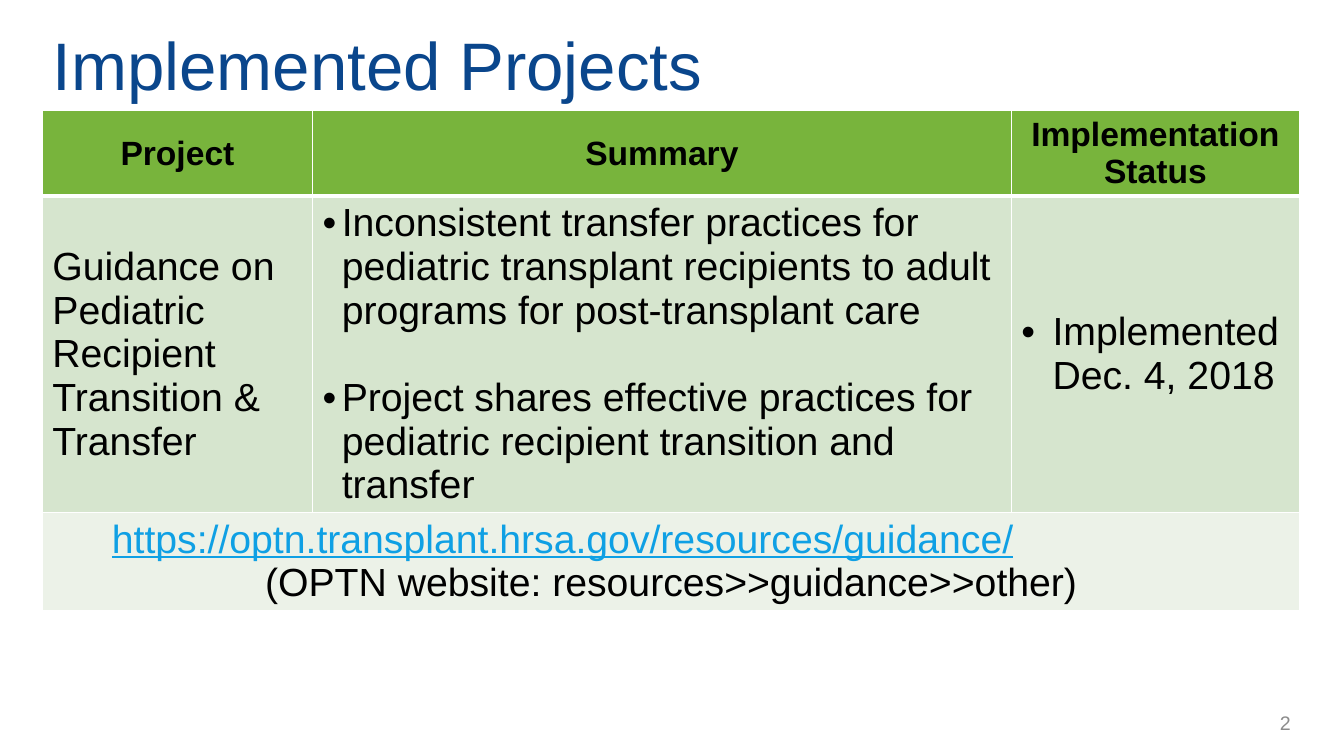
from lxml.etree import SubElement
from pptx import Presentation
from pptx.dml.color import RGBColor
from pptx.enum.text import MSO_ANCHOR, PP_ALIGN
from pptx.oxml import parse_xml
from pptx.oxml.ns import nsdecls, qn
from pptx.util import Inches, Pt

COLUMN_WIDTHS = [2.68, 6.93, 2.86]
ROW_HEIGHTS = [0.83, 3.14, 0.97]
HEADER_GREEN = "78B43C"
BODY_GREEN = "D6E5CE"
LINK_GREEN = "ECF2E8"


def color(value):
    """Turn a hex string into a colour."""
    return RGBColor.from_string(value)


def write(frame, text, size=28, ink="000000", bold=False, underline=False,
          align=PP_ALIGN.LEFT, indent=0, bullet=False, space_before=0):
    """Add one formatted paragraph, using the empty first one if there is one."""
    para = frame.paragraphs[0]
    if para.runs:
        para = frame.add_paragraph()
    para.alignment = align
    para.space_before = Pt(space_before)
    properties = para._p.get_or_add_pPr()
    if indent:
        properties.set("marL", str(Inches(indent)))
        properties.set("indent", str(-Inches(indent) if bullet else 0))
    if bullet:
        SubElement(properties, qn("a:buFont"), typeface="Arial")
        SubElement(properties, qn("a:buChar"), char="•")
    span = para.add_run()
    span.text = text
    font = span.font
    font.name, font.size, font.bold, font.underline = "Arial", Pt(size), bold, underline
    font.color.rgb = color(ink)


def style_cell(cell, fill, top=1, bottom=1):
    """Fill a cell and give it white borders."""
    cell.vertical_anchor = MSO_ANCHOR.MIDDLE
    cell.fill.solid()
    cell.fill.fore_color.rgb = color(fill)
    properties = cell._tc.get_or_add_tcPr()
    widths = {"lnL": 1, "lnR": 1, "lnT": top, "lnB": bottom}
    for place, (side, width) in enumerate(widths.items()):
        properties.insert(place, parse_xml(
            f'<a:{side} {nsdecls("a")} w="{Pt(width)}"><a:solidFill>'
            f'<a:srgbClr val="FFFFFF"/></a:solidFill></a:{side}>'))


def add_title(page, text):
    """Place the slide title."""
    title = page.shapes.title
    title.left, title.top = Inches(0.42), Inches(0.17)
    title.width, title.height = Inches(12.75), Inches(0.93)
    title.text_frame.vertical_anchor = MSO_ANCHOR.MIDDLE
    write(title.text_frame, text, size=48, ink="0A468C")


def add_project_table(page):
    """Build the table of implemented projects."""
    table = page.shapes.add_table(
        len(ROW_HEIGHTS), len(COLUMN_WIDTHS), Inches(0.42), Inches(1.1),
        Inches(sum(COLUMN_WIDTHS)), Inches(sum(ROW_HEIGHTS))).table
    for column, width in zip(table.columns, COLUMN_WIDTHS):
        column.width = Inches(width)
    for row, height in zip(table.rows, ROW_HEIGHTS):
        row.height = Inches(height)

    for index, heading in enumerate(["Project", "Summary", "Implementation Status"]):
        style_cell(table.cell(0, index), HEADER_GREEN, bottom=3)
        style_cell(table.cell(1, index), BODY_GREEN, top=3)
        style_cell(table.cell(2, index), LINK_GREEN)
        write(table.cell(0, index).text_frame, heading, size=24, bold=True,
              align=PP_ALIGN.CENTER)

    project, summary, status = [table.cell(1, index).text_frame for index in range(3)]
    write(project, "Guidance on Pediatric Recipient Transition & Transfer")
    write(summary, "Inconsistent transfer practices for pediatric transplant recipients "
          "to adult programs for post-transplant care", indent=0.19, bullet=True)
    write(summary, "Project shares effective practices for pediatric recipient "
          "transition and transfer", indent=0.19, bullet=True, space_before=31)
    write(status, "Implemented Dec. 4, 2018", indent=0.31, bullet=True)

    table.cell(2, 0).merge(table.cell(2, 2))
    link = table.cell(2, 0).text_frame
    write(link, "https://optn.transplant.hrsa.gov/resources/guidance/",
          ink="0FA0E4", underline=True, indent=0.59)
    write(link, "(OPTN website: resources>>guidance>>other)", align=PP_ALIGN.CENTER)


def add_page_number(page, number):
    """Put the page number at the lower right."""
    box = page.shapes.add_textbox(Inches(10.64), Inches(6.97), Inches(2.26), Inches(0.4))
    box.text_frame.word_wrap = True
    box.text_frame.vertical_anchor = MSO_ANCHOR.MIDDLE
    write(box.text_frame, number, size=14, ink="8C8C8C", align=PP_ALIGN.RIGHT)


def main():
    """Build and save the deck."""
    deck = Presentation()
    deck.slide_width, deck.slide_height = Inches(13.33), Inches(7.5)
    page = deck.slides.add_slide(deck.slide_layouts[5])
    add_project_table(page)
    add_title(page, "Implemented Projects")
    add_page_number(page, "2")
    deck.save("out.pptx")


if __name__ == "__main__":
    main()
